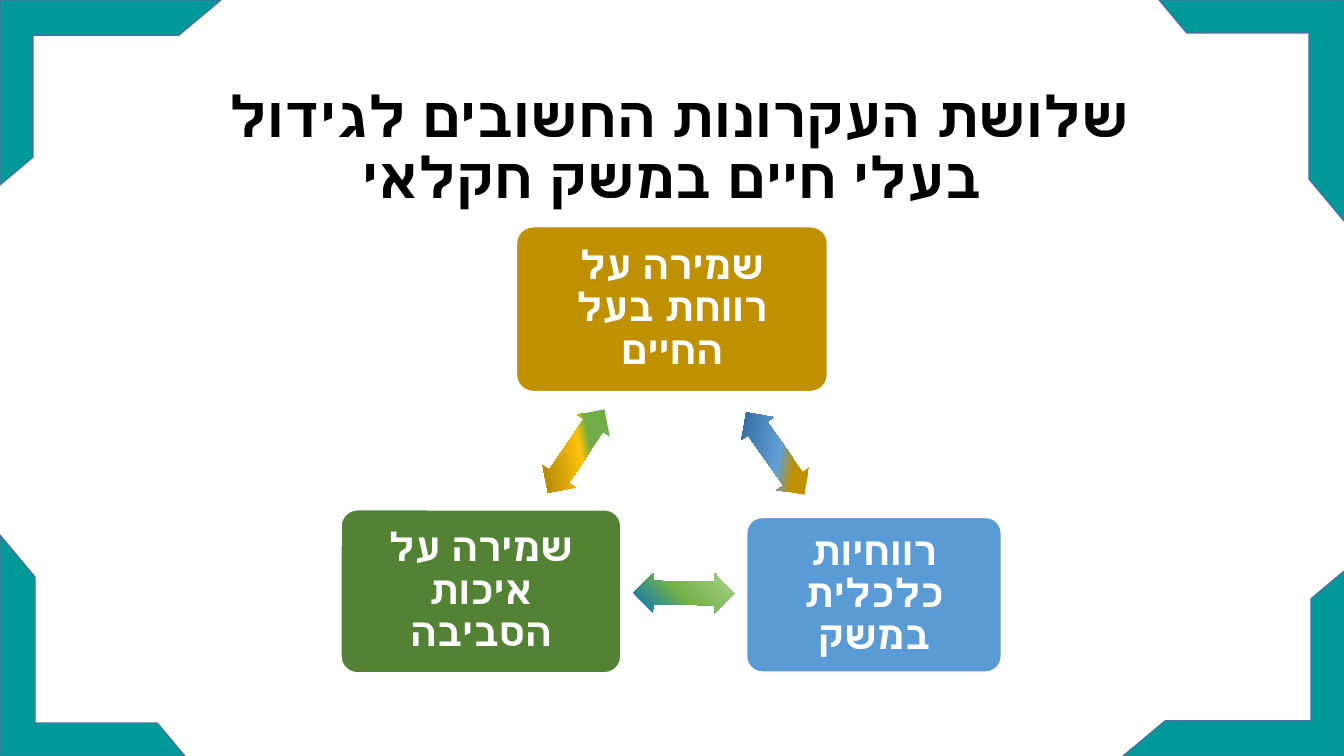
"""Builds a slide on the three principles of raising farm animals."""
from dataclasses import dataclass

from lxml import etree
from pptx import Presentation
from pptx import util as u
from pptx.dml.color import RGBColor
from pptx.enum import lang, shapes, text
from pptx.oxml import ns

COLUMNS, ROWS = 160, 90
WIDTH, HEIGHT = u.Inches(13.33), u.Inches(7.5)


@dataclass(frozen=True)
class Theme:
    """Colours, fonts and type sizes of the slide."""
    ink: str = "000000"
    paper: str = "FFFFFF"
    gold: str = "BF9000"
    blue: str = "5B9BD5"
    green: str = "548235"
    corner: str = "009999"
    corner_edge: str = "43739E"
    title_font: str = "Courier New"
    body_font: str = "Calibri"
    title_size: float = 40.5
    body_size: float = 28
    gold_to_blue: tuple = ((31, "BF9000"), (46, "63A0D7"), (100, "255E91"))
    green_to_blue: tuple = ((0, "0070C0"), (48, "74B349"), (100, "A9D18E"))
    green_to_gold: tuple = ((36, "70AD47"), (46, "FFC30D"), (100, "997300"))


THEME = Theme()


def place(left, top, width, height):
    """Turn grid columns and rows into slide lengths."""
    return (int(WIDTH * left / COLUMNS), int(HEIGHT * top / ROWS),
            int(WIDTH * width / COLUMNS), int(HEIGHT * height / ROWS))


def write(frame, wording, font, size, colour, inset):
    """Write one centred bold right-to-left paragraph into a text frame."""
    frame.word_wrap = True
    frame.vertical_anchor = text.MSO_ANCHOR.MIDDLE
    frame.margin_left = frame.margin_right = u.Inches(inset)
    frame.margin_top = frame.margin_bottom = u.Inches(inset)
    paragraph = frame.paragraphs[0]
    paragraph.text = wording
    paragraph.alignment = text.PP_ALIGN.CENTER
    paragraph.line_spacing = 0.9
    paragraph._p.get_or_add_pPr().set("rtl", "1")
    for run in paragraph.runs:
        run.font.name = font
        run.font.size = u.Pt(size)
        run.font.bold = True
        run.font.color.rgb = RGBColor.from_string(colour)
        run.font.language_id = lang.MSO_LANGUAGE_ID.HEBREW


def add_preset(slide, preset, area, adjustments, rotation=0):
    """Add a shadowless preset shape on the grid."""
    shape = slide.shapes.add_shape(preset, *place(*area))
    shape.shadow.inherit = False
    shape.rotation = rotation
    for index, value in enumerate(adjustments):
        shape.adjustments[index] = value
    return shape


def paint(shape, fill, edge):
    """Give a shape a solid fill and a one-point outline."""
    shape.fill.solid()
    shape.fill.fore_color.rgb = RGBColor.from_string(fill)
    shape.line.color.rgb = RGBColor.from_string(edge)
    shape.line.width = u.Pt(1)


def add_title(slide, wording):
    """Add the heading of the slide."""
    heading = slide.shapes.add_textbox(*place(20, 11.3, 120, 13.1))
    write(heading.text_frame, wording, THEME.title_font, THEME.title_size,
          THEME.ink, 0.05)


def add_principle(slide, wording, area, colour):
    """Add a rounded box that names one principle."""
    principle = add_preset(slide, shapes.MSO_SHAPE.ROUNDED_RECTANGLE, area, [0.1])
    paint(principle, colour, THEME.paper)
    write(principle.text_frame, wording, THEME.body_font, THEME.body_size,
          THEME.paper, 0.12)


def add_link(slide, centre, rotation, stops, angle):
    """Add a two-headed gradient arrow around a centre point."""
    length, thickness = 12, 4.7
    area = (centre[0] - length / 2, centre[1] - thickness / 2, length, thickness)
    link = add_preset(slide, shapes.MSO_SHAPE.LEFT_RIGHT_ARROW, area,
                      [0.6, 0.5], rotation)
    link.line.fill.background()
    link.fill.gradient()
    gradient = link._element.spPr.find(ns.qn("a:gradFill"))
    gradient.set("rotWithShape", "1")
    gradient.find(ns.qn("a:lin")).set("ang", str(angle * 60000))
    stop_list = gradient.find(ns.qn("a:gsLst"))
    for stop in list(stop_list):
        stop_list.remove(stop)
    for position, colour in stops:
        stop = etree.SubElement(stop_list, ns.qn("a:gs"), pos=str(position * 1000))
        etree.SubElement(stop, ns.qn("a:srgbClr"), val=colour)


def add_corners(slide):
    """Frame the four slide corners with one half frame turned clockwise."""
    length, depth = 26.3, 22
    for turn in range(4):
        across, down = (depth, length) if turn % 2 else (length, depth)
        centre_x = COLUMNS - across / 2 if turn in (1, 2) else across / 2
        centre_y = ROWS - down / 2 if turn in (2, 3) else down / 2
        area = (centre_x - length / 2, centre_y - depth / 2, length, depth)
        corner = add_preset(slide, shapes.MSO_SHAPE.HALF_FRAME, area,
                            [0.19, 0.178], 90 * turn)
        paint(corner, THEME.corner, THEME.corner_edge)


def main():
    """Build and save the slide."""
    deck = Presentation()
    deck.slide_width, deck.slide_height = WIDTH, HEIGHT
    slide = deck.slides.add_slide(deck.slide_layouts[6])
    add_title(slide, "שלושת העקרונות החשובים לגידול \vבעלי חיים במשק חקלאי")
    for wording, area, colour in (
        ("שמירה על רווחת בעל החיים", (61.5, 27, 37, 19.6), THEME.gold),
        ("רווחיות כלכלית במשק", (88.9, 61.6, 30.3, 18.4), THEME.blue),
        ("שמירה על איכות הסביבה", (40.6, 60.7, 33.3, 19.4), THEME.green),
    ):
        add_principle(slide, wording, area, colour)
    add_link(slide, (92.3, 54), 54.7, THEME.gold_to_blue, 135)
    add_link(slide, (81.4, 70.6), 180.5, THEME.green_to_blue, 135)
    add_link(slide, (68.6, 53.7), 304.1, THEME.green_to_gold, 225)
    add_corners(slide)
    deck.save("out.pptx")


if __name__ == "__main__":
    main()
